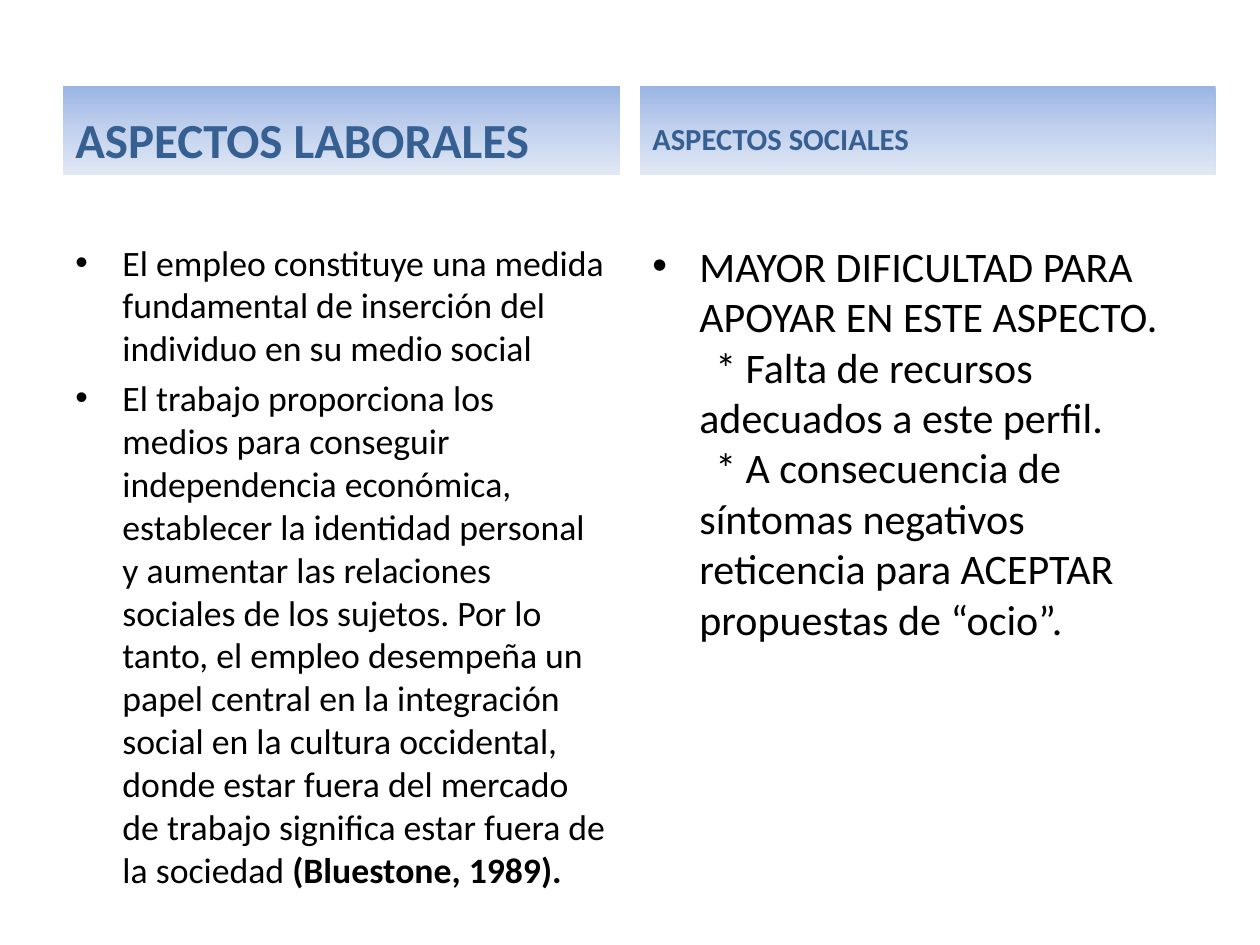
import copy
import pptx
import pptx.dml.color
import pptx.enum.shapes
import pptx.enum.text
import pptx.oxml
import pptx.oxml.ns
import pptx.util
from pptx.util import Cm

FONT = "Calibri"
HEADING = pptx.dml.color.RGBColor(0x37, 0x60, 0x92)
BLACK = pptx.dml.color.RGBColor(0, 0, 0)
GRADIENT = [
    (0, pptx.dml.color.RGBColor(0x9A, 0xB5, 0xE4)),
    (0.5, pptx.dml.color.RGBColor(0xC2, 0xD1, 0xED)),
    (1, pptx.dml.color.RGBColor(0xE1, 0xE8, 0xF5)),
]

COLUMNS = [
    {
        "left": 1.27, "header_width": 11.23, "body_height": 10.8,
        "title": "ASPECTOS LABORALES", "title_size": 28, "title_inset": 0.13,
        "size": 20.4,
        "bullets": [
            [("El empleo constituye una medida fundamental de inserción del "
              "individuo en su medio social", False)],
            [("El trabajo proporciona los medios para conseguir independencia "
              "económica, establecer la identidad personal y aumentar las "
              "relaciones sociales de los sujetos. Por lo tanto, el empleo "
              "desempeña un papel central en la integración social en la "
              "cultura occidental, donde estar fuera del mercado de trabajo "
              "significa estar fuera de la sociedad ", False),
             ("(Bluestone, 1989).", True)],
        ],
    },
    {
        "left": 12.9, "header_width": 11.61, "body_height": 9.6,
        "title": "ASPECTOS SOCIALES", "title_size": 17.5, "title_inset": 0.38,
        "size": 24,
        "bullets": [
            [("MAYOR DIFICULTAD PARA APOYAR EN ESTE ASPECTO.\n"
              "\t* Falta de recursos adecuados a este perfil.\n"
              "\t* A consecuencia de síntomas negativos reticencia para "
              "ACEPTAR propuestas de “ocio”.", False)],
        ],
    },
]
HEADER_TOP, HEADER_HEIGHT = 1.73, 1.8
BODY_TOP, BODY_WIDTH = 4.72, 11.23
INDENT = Cm(0.95)


def add_span(para, text, size, color, bold):
    for index, line in enumerate(text.split("\n")):
        if index:
            para.add_line_break()
        span = para.add_run()
        span.text = line
        span.font.name = FONT
        span.font.size = pptx.util.Pt(size)
        span.font.bold = bold
        span.font.color.rgb = color


def fill_gradient(shape):
    shape.fill.gradient()
    shape.fill.gradient_angle = 270
    stops = shape._element.spPr.find(".//" + pptx.oxml.ns.qn("a:gsLst"))
    stops.append(copy.deepcopy(stops[0]))
    for stop, (position, color) in zip(shape.fill.gradient_stops, GRADIENT):
        stop.position = position
        stop.color.rgb = color


def add_bullet(para):
    properties = para._p.get_or_add_pPr()
    properties.set("marL", str(INDENT))
    properties.set("indent", str(-INDENT))
    namespace = pptx.oxml.ns.nsdecls("a")
    properties.append(pptx.oxml.parse_xml(f'<a:buFont {namespace} typeface="Arial"/>'))
    properties.append(pptx.oxml.parse_xml(f'<a:buChar {namespace} char="•"/>'))


def add_header(slide, column):
    header = slide.shapes.add_shape(
        pptx.enum.shapes.MSO_SHAPE.RECTANGLE, Cm(column["left"]), Cm(HEADER_TOP),
        Cm(column["header_width"]), Cm(HEADER_HEIGHT))
    header.shadow.inherit = False
    header.line.fill.background()
    fill_gradient(header)
    frame = header.text_frame
    frame.word_wrap = True
    frame.vertical_anchor = pptx.enum.text.MSO_ANCHOR.BOTTOM
    frame.margin_bottom = Cm(column["title_inset"])
    para = frame.paragraphs[0]
    para.alignment = pptx.enum.text.PP_ALIGN.LEFT
    add_span(para, column["title"], column["title_size"], HEADING, True)


def add_body(slide, column):
    box = slide.shapes.add_textbox(
        Cm(column["left"]), Cm(BODY_TOP), Cm(BODY_WIDTH), Cm(column["body_height"]))
    frame = box.text_frame
    frame.word_wrap = True
    for index, spans in enumerate(column["bullets"]):
        para = frame.add_paragraph() if index else frame.paragraphs[0]
        para.space_before = pptx.util.Pt(round(column["size"] * 0.2, 1))
        add_bullet(para)
        for text, bold in spans:
            add_span(para, text, column["size"], BLACK, bold)


def main():
    deck = pptx.Presentation()
    deck.slide_width, deck.slide_height = Cm(25.4), Cm(19.05)
    slide = deck.slides.add_slide(deck.slide_layouts[6])
    for column in COLUMNS:
        add_header(slide, column)
        add_body(slide, column)
    deck.save("out.pptx")


if __name__ == "__main__":
    main()
